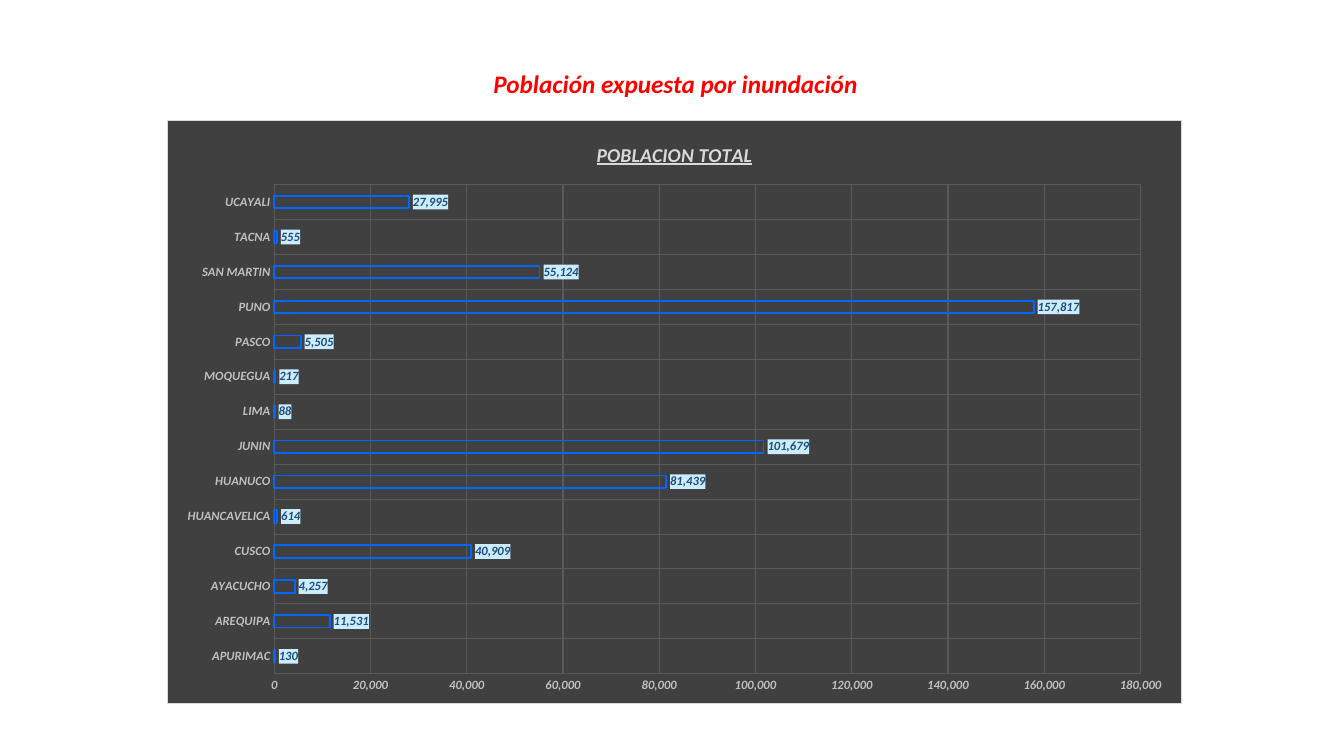
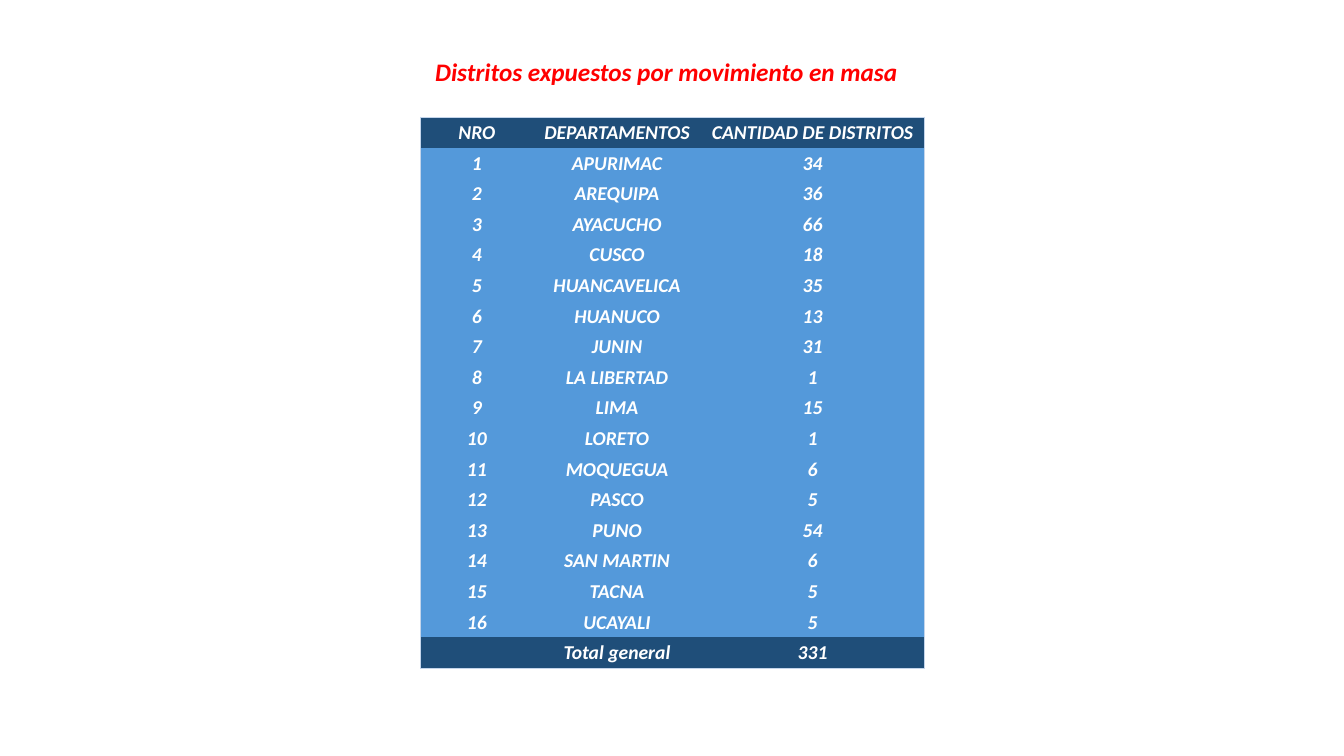
"""Build two slides on flood-exposed population and districts exposed to mass movement."""
from lxml.etree import SubElement
from pptx import Presentation
from pptx.chart.data import CategoryChartData
from pptx.dml.color import RGBColor
from pptx.enum.chart import XL_CHART_TYPE, XL_LABEL_POSITION, XL_TICK_MARK
from pptx.enum.text import MSO_ANCHOR, PP_ALIGN
from pptx.oxml import parse_xml
from pptx.oxml.ns import nsdecls, qn
from pptx.util import Inches, Pt

FONT = "Calibri"
COLORS = {
    "title": "FF0000", "panel": "404040", "panel_edge": "D9D9D9", "grid": "595959",
    "axis": "BFBFBF", "bar": "0066FF", "label": "1F4E79", "label_fill": "CCECFF",
    "band": "1F4E79", "body": "5499DA", "edge": "C4D5EB", "white": "FFFFFF",
}


def style(font, size, color, underline=None):
    font.name, font.size = FONT, Pt(size)
    font.bold = font.italic = True
    font.underline = underline
    font.color.rgb = RGBColor.from_string(COLORS[color])


def write(frame, text, **look):
    paragraph = frame.paragraphs[0]
    paragraph.alignment = PP_ALIGN.CENTER
    run = paragraph.add_run()
    run.text = text
    style(run.font, **look)


deck = Presentation()
deck.slide_width, deck.slide_height = Inches(13.33), Inches(7.5)
headings = [
    ("Población expuesta por inundación", 4.77, 0.63, 3.86),
    ("Distritos expuestos por movimiento en masa", 4.16, 0.51, 4.9),
]
for heading, left, top, width in headings:
    slide = deck.slides.add_slide(deck.slide_layouts[6])
    box = slide.shapes.add_textbox(Inches(left), Inches(top), Inches(width), Inches(0.4))
    box.text_frame.word_wrap = False
    write(box.text_frame, heading, size=18, color="title")
population_slide, districts_slide = deck.slides

population = {
    "APURIMAC": 130, "AREQUIPA": 11531, "AYACUCHO": 4257, "CUSCO": 40909,
    "HUANCAVELICA": 614, "HUANUCO": 81439, "JUNIN": 101679, "LIMA": 88,
    "MOQUEGUA": 217, "PASCO": 5505, "PUNO": 157817, "SAN MARTIN": 55124,
    "TACNA": 555, "UCAYALI": 27995,
}
population_data = CategoryChartData(number_format="#,##0")
population_data.categories = list(population)
population_data.add_series("POBLACION TOTAL", list(population.values()))
chart = population_slide.shapes.add_chart(
    XL_CHART_TYPE.BAR_CLUSTERED, Inches(1.66), Inches(1.19), Inches(10.06), Inches(5.79),
    population_data).chart
chart.has_legend = False
chart.font.name, chart.font.size = FONT, Pt(10)
chart.has_title = True
write(chart.chart_title.text_frame, "POBLACION TOTAL", size=14, color="panel_edge", underline=True)
chart.chart_title.include_in_layout = False

for axis in (chart.category_axis, chart.value_axis):
    axis.major_tick_mark = axis.minor_tick_mark = XL_TICK_MARK.NONE
    axis.has_major_gridlines = True
    gridline = axis.major_gridlines.format.line
    gridline.width = Pt(0.75)
    gridline.color.rgb = RGBColor.from_string(COLORS["grid"])
    axis.format.line.fill.background()
    style(axis.tick_labels.font, 9, "axis")
chart.value_axis.minimum_scale = 0
chart.value_axis.maximum_scale = 180000
chart.value_axis.major_unit = 20000
chart.value_axis.tick_labels.number_format = "#,##0"
chart.value_axis.tick_labels.number_format_is_linked = False

plot = chart.plots[0]
plot.vary_by_categories = False
plot.gap_width, plot.overlap = 182, -50
bars = plot.series[0]
bars.format.fill.background()
bars.format.line.width = Pt(1.25)
bars.format.line.color.rgb = RGBColor.from_string(COLORS["bar"])
labels = bars.data_labels
labels.show_value = True
labels.position = XL_LABEL_POSITION.OUTSIDE_END
labels.number_format, labels.number_format_is_linked = "#,##0", False
style(labels.font, 9, "label")

label_fill = parse_xml(
    f'<c:spPr {nsdecls("c", "a")}><a:solidFill><a:srgbClr val="{COLORS["label_fill"]}"/>'
    '</a:solidFill></c:spPr>')
chart.element.xpath(".//c:ser/c:dLbls/c:txPr")[0].addprevious(label_fill)
panel = parse_xml(
    f'<c:spPr {nsdecls("c", "a")}><a:solidFill><a:srgbClr val="{COLORS["panel"]}"/></a:solidFill>'
    f'<a:ln w="{Pt(0.75)}"><a:solidFill><a:srgbClr val="{COLORS["panel_edge"]}"/></a:solidFill>'
    '</a:ln></c:spPr>')
chart.element.find(qn("c:chart")).addnext(panel)
plot_area = chart.element.xpath(".//c:plotArea")[0]
for automatic in plot_area.findall(qn("c:layout")):
    plot_area.remove(automatic)
layout = parse_xml(f'<c:layout {nsdecls("c")}><c:manualLayout/></c:layout>')
settings = {"layoutTarget": "inner", "xMode": "edge", "yMode": "edge",
            "x": 0.105, "y": 0.11, "w": 0.855, "h": 0.84}
for setting, value in settings.items():
    SubElement(layout[0], qn(f"c:{setting}")).set("val", str(value))
plot_area.insert(0, layout)

districts = {
    "APURIMAC": 34, "AREQUIPA": 36, "AYACUCHO": 66, "CUSCO": 18, "HUANCAVELICA": 35,
    "HUANUCO": 13, "JUNIN": 31, "LA LIBERTAD": 1, "LIMA": 15, "LORETO": 1, "MOQUEGUA": 6,
    "PASCO": 5, "PUNO": 54, "SAN MARTIN": 6, "TACNA": 5, "UCAYALI": 5,
}
rows = [("NRO", "DEPARTAMENTOS", "CANTIDAD DE DISTRITOS")]
rows += [(number, *entry) for number, entry in enumerate(districts.items(), 1)]
rows.append(("", "Total general", sum(districts.values())))
last_row, last_column = len(rows) - 1, len(rows[0]) - 1
table = districts_slide.shapes.add_table(
    len(rows), len(rows[0]), Inches(4.17), Inches(1.16), Inches(5), Inches(5.47)).table
table.horz_banding = False
for column, width in zip(table.columns, (1.12, 1.66, 2.22)):
    column.width = Inches(width)
for r, values in enumerate(rows):
    table.rows[r].height = Inches(5.47 / len(rows))
    for c, value in enumerate(values):
        cell = table.cell(r, c)
        cell.margin_left = cell.margin_right = cell.margin_top = Inches(0.01)
        cell.margin_bottom = 0
        cell.vertical_anchor = MSO_ANCHOR.MIDDLE
        write(cell.text_frame, str(value), size=14, color="white")
        outer = {"L": c == 0, "R": c == last_column, "T": r == 0, "B": r == last_row}
        for side, is_outer in outer.items():
            border = SubElement(cell._tc.get_or_add_tcPr(), qn(f"a:ln{side}"), w=str(Pt(0.5)))
            if is_outer:
                SubElement(SubElement(border, qn("a:solidFill")), qn("a:srgbClr"), val=COLORS["edge"])
            else:
                SubElement(border, qn("a:noFill"))
        cell.fill.solid()
        cell.fill.fore_color.rgb = RGBColor.from_string(
            COLORS["band" if r in (0, last_row) else "body"])

deck.save("out.pptx")
